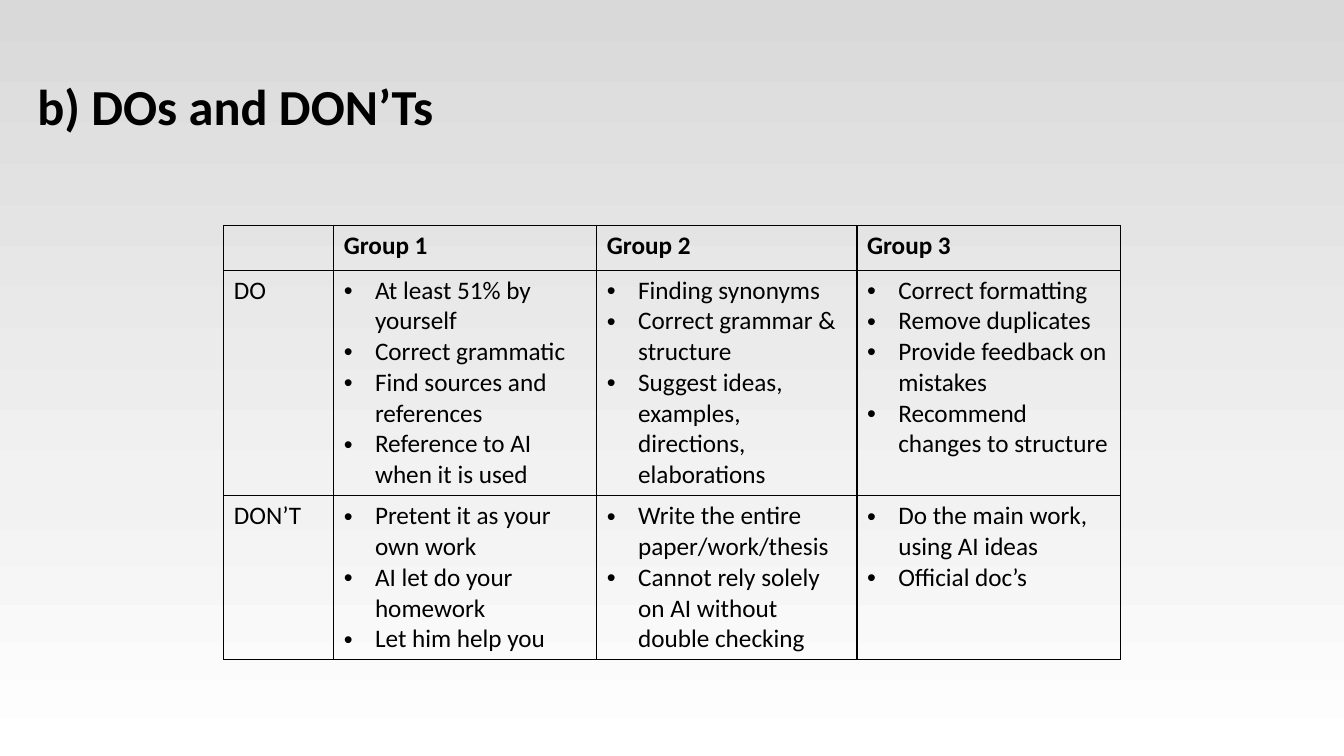
from copy import deepcopy
from dataclasses import dataclass

from lxml import etree
from pptx import Presentation
from pptx.dml.color import RGBColor
from pptx.enum.text import MSO_ANCHOR, MSO_AUTO_SIZE, PP_ALIGN
from pptx.oxml.ns import qn
from pptx.slide import Slide
from pptx.table import _Cell
from pptx.text.text import _Paragraph
from pptx.util import Inches, Pt

LEFT = PP_ALIGN.LEFT
MIDDLE = MSO_ANCHOR.MIDDLE
NO_AUTOFIT = MSO_AUTO_SIZE.NONE
FONT = "Calibri"
BLACK = "000000"
TITLE_ONLY_LAYOUT = 5
BACKGROUND_STOPS = [(0, "D9D9D9"), (0.65, "F2F2F2"), (1, "FFFFFF")]
COLUMN_WIDTHS = [1.09, 2.61, 2.58, 2.61]
HEADINGS = ["", "Group 1", "Group 2", "Group 3"]
HEADING_HEIGHT = 0.44
BULLET_INDENT = 0.31


@dataclass(frozen=True)
class AdviceRow:
    label: str
    height: float
    groups: list[list[str]]


ADVICE_ROWS = [
    AdviceRow("DO", 2.24, [
        ["At least 51% by yourself", "Correct grammatic",
         "Find sources and references", "Reference to AI when it is used"],
        ["Finding synonyms", "Correct grammar & structure",
         "Suggest ideas, examples, directions, elaborations"],
        ["Correct formatting", "Remove duplicates",
         "Provide feedback on mistakes", "Recommend changes to structure"],
    ]),
    AdviceRow("DON’T", 1.62, [
        ["Pretent it as your own work", "AI let do your homework",
         "Let him help you"],
        ["Write the entire paper/work/thesis",
         "Cannot rely solely on AI without double checking"],
        ["Do the main work, using AI ideas", "Official doc’s"],
    ]),
]


def color(hex_code: str) -> RGBColor:
    return RGBColor.from_string(hex_code)


def add_run(paragraph: _Paragraph, text: str, size: float, bold: bool) -> None:
    run = paragraph.add_run()
    run.text = text
    run.font.name = FONT
    run.font.size = Pt(size)
    run.font.bold = bold
    run.font.color.rgb = color(BLACK)


def fill_background(slide: Slide) -> None:
    fill = slide.background.fill
    fill.gradient()
    fill.gradient_angle = 270
    stop_list = slide.element.find(".//" + qn("a:gsLst"))
    stop_list.append(deepcopy(stop_list[-1]))
    for stop, (position, hex_code) in zip(fill.gradient_stops, BACKGROUND_STOPS):
        stop.position = position
        stop.color.rgb = color(hex_code)


def add_title(slide: Slide, text: str) -> None:
    title = slide.shapes.title
    title.left, title.top = Inches(0.17), Inches(0.29)
    title.width, title.height = Inches(12.99), Inches(1.59)
    frame = title.text_frame
    frame.auto_size = NO_AUTOFIT
    frame.word_wrap = True
    frame.vertical_anchor = MIDDLE
    frame.margin_left = frame.margin_right = Inches(0.2)
    frame.margin_top = frame.margin_bottom = Inches(0.2)
    paragraph = frame.paragraphs[0]
    paragraph.alignment = LEFT
    paragraph.line_spacing = 0.9
    add_run(paragraph, text, 36, True)


def add_bullet(paragraph: _Paragraph) -> None:
    properties = paragraph._p.get_or_add_pPr()
    properties.set("marL", str(Inches(BULLET_INDENT)))
    properties.set("indent", str(-Inches(BULLET_INDENT)))
    etree.SubElement(properties, qn("a:buFont"), typeface="Arial")
    etree.SubElement(properties, qn("a:buChar"), char="•")


def outline_cell(cell: _Cell) -> None:
    properties = cell._tc.get_or_add_tcPr()
    for side in ("lnL", "lnR", "lnT", "lnB"):
        line = etree.SubElement(properties, qn(f"a:{side}"), w=str(Pt(1)))
        solid = etree.SubElement(line, qn("a:solidFill"))
        etree.SubElement(solid, qn("a:srgbClr"), val=BLACK)


def write_cell(cell: _Cell, lines: list[str], bold: bool = False,
               bulleted: bool = False) -> None:
    outline_cell(cell)
    cell.fill.background()
    frame = cell.text_frame
    for index, text in enumerate(lines):
        paragraph = frame.add_paragraph() if index else frame.paragraphs[0]
        if bulleted:
            add_bullet(paragraph)
        if text:
            add_run(paragraph, text, 18, bold)


def add_advice_table(slide: Slide) -> None:
    heights = [HEADING_HEIGHT] + [row.height for row in ADVICE_ROWS]
    table = slide.shapes.add_table(
        len(heights), len(COLUMN_WIDTHS), Inches(2.22), Inches(2.24),
        Inches(sum(COLUMN_WIDTHS)), Inches(sum(heights))).table
    table.first_row = False
    table.horz_banding = False
    for column, width in zip(table.columns, COLUMN_WIDTHS):
        column.width = Inches(width)
    for table_row, height in zip(table.rows, heights):
        table_row.height = Inches(height)

    for column_index, heading in enumerate(HEADINGS):
        write_cell(table.cell(0, column_index), [heading], bold=True)
    for row_index, advice in enumerate(ADVICE_ROWS, start=1):
        write_cell(table.cell(row_index, 0), [advice.label])
        for column_index, items in enumerate(advice.groups, start=1):
            write_cell(table.cell(row_index, column_index), items, bulleted=True)


def main() -> None:
    presentation = Presentation()
    presentation.slide_width = Inches(13.33)
    presentation.slide_height = Inches(7.5)
    layout = presentation.slide_layouts[TITLE_ONLY_LAYOUT]
    slide = presentation.slides.add_slide(layout)
    fill_background(slide)
    add_title(slide, "b) DOs and DON’Ts")
    add_advice_table(slide)
    presentation.save("out.pptx")


if __name__ == "__main__":
    main()
